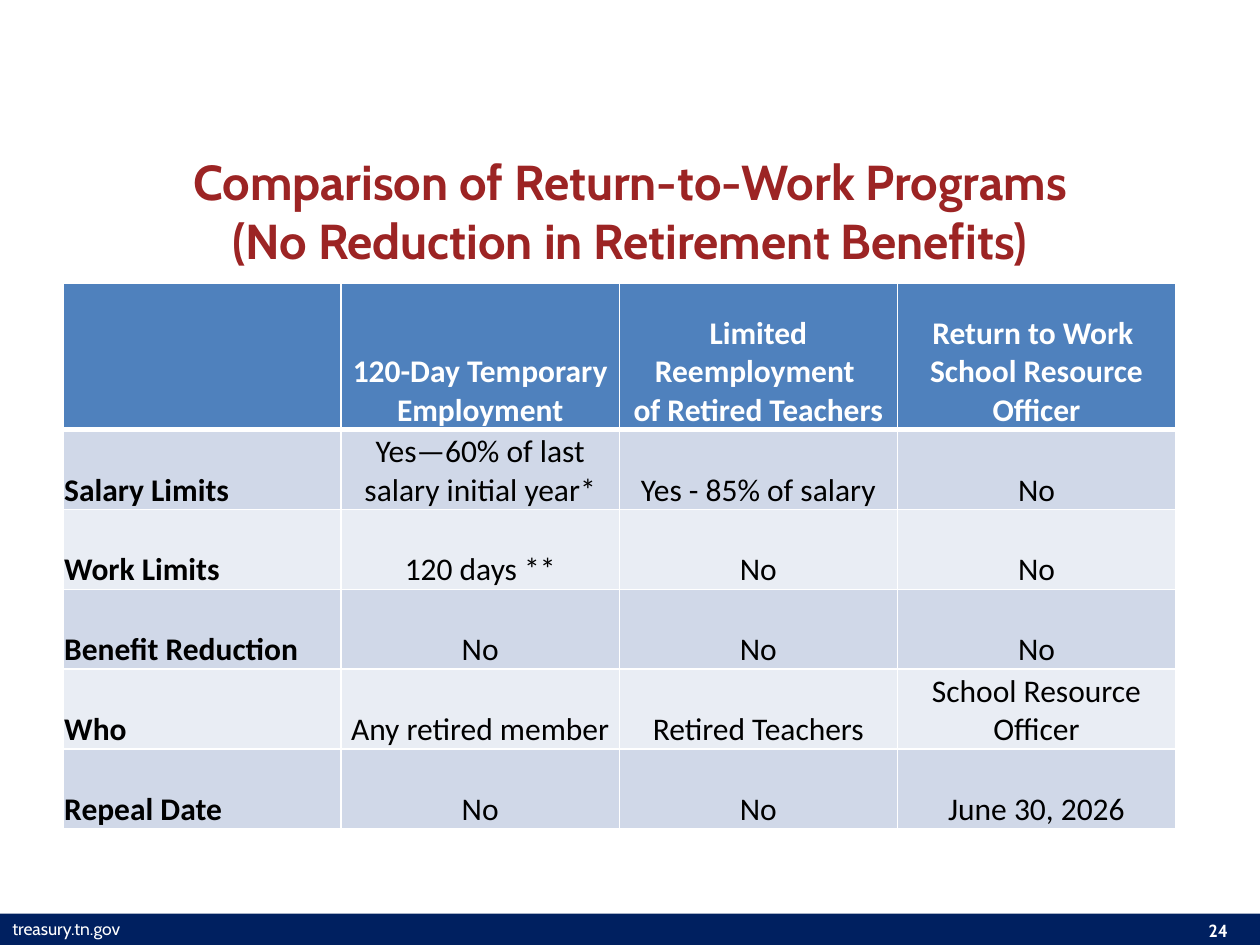
from lxml import etree
from pptx import Presentation
from pptx.dml.color import RGBColor
from pptx.enum.shapes import MSO_SHAPE
from pptx.enum.text import MSO_ANCHOR, PP_ALIGN
from pptx.oxml.ns import qn
from pptx.util import Inches, Pt

RECT = MSO_SHAPE.RECTANGLE
MIDDLE, BOTTOM = MSO_ANCHOR.MIDDLE, MSO_ANCHOR.BOTTOM
LEFT, CENTER = PP_ALIGN.LEFT, PP_ALIGN.CENTER
TITLE_ONLY = 5

WHITE, BLACK, NAVY, RED = "FFFFFF", "000000", "002060", "9C2424"
HEADER, BANDS = "4F81BD", ("D0D8E8", "E9EDF4")

TITLE = "Comparison of Return-to-Work Programs\v(No Reduction in Retirement Benefits)"
ROWS = [
    ["", "120-Day Temporary\vEmployment",
     "Limited Reemployment \vof Retired Teachers",
     "Return to Work \vSchool Resource Officer"],
    ["Salary Limits", "Yes—60% of last salary initial year*", "Yes - 85% of salary", "No"],
    ["Work Limits", "120 days **", "No", "No"],
    ["Benefit Reduction", "No", "No", "No"],
    ["Who", "Any retired member", "Retired Teachers", "School Resource Officer"],
    ["Repeal Date", "No", "No", "June 30, 2026"],
]


def rgb(value):
    return RGBColor.from_string(value)


def inches(box):
    return [Inches(v) for v in box]


def write(tf, text, size, font, color, bold=False, align=LEFT):
    tf.text = text
    for p in tf.paragraphs:
        p.alignment = align
        for r in p.runs:
            r.font.size, r.font.name, r.font.bold = Pt(size), font, bold
            r.font.color.rgb = rgb(color)


def set_borders(cell, widths):
    """Draw white borders; widths are points for left, right, top, bottom."""
    tcPr = cell._tc.get_or_add_tcPr()
    for i, (tag, width) in enumerate(zip(("lnL", "lnR", "lnT", "lnB"), widths)):
        ln = etree.Element(qn(f"a:{tag}"), w=str(Pt(width)))
        fill = etree.SubElement(ln, qn("a:solidFill"))
        etree.SubElement(fill, qn("a:srgbClr"), val=WHITE)
        tcPr.insert(i, ln)


def add_footer(slide, box, page):
    x, y, w, h = box
    # Navy strip, running slightly past both slide edges
    bar = slide.shapes.add_shape(RECT, *inches((x - 0.16, y, w + 0.25, h)))
    bar.shadow.inherit = False
    bar.fill.solid()
    bar.fill.fore_color.rgb = rgb(NAVY)
    bar.line.fill.background()
    # Web address and page number
    labels = [("treasury.tn.gov", x, y - 0.01, 1.83, False, LEFT),
              (page, x + w - 0.58, y, 0.5, True, CENTER)]
    for text, left, top, width, bold, align in labels:
        tb = slide.shapes.add_textbox(*inches((left, top, width, 0.27)))
        tb.text_frame.word_wrap = True
        write(tb.text_frame, text, 10, "Cabin", WHITE, bold, align)


def add_title(slide, box):
    title = slide.shapes.title
    title.left, title.top, title.width, title.height = inches(box)
    title.text_frame.vertical_anchor = MIDDLE
    write(title.text_frame, TITLE, 28, "Cabin", RED, True, CENTER)


def add_comparison(slide, box, header_height):
    n_rows, n_cols = len(ROWS), len(ROWS[0])
    table = slide.shapes.add_table(n_rows, n_cols, *inches(box)).table
    row_height = (box[3] - header_height) / (n_rows - 1)
    for col in table.columns:
        col.width = Inches(box[2] / n_cols)
    for i, row in enumerate(ROWS):
        table.rows[i].height = Inches(row_height if i else header_height)
        for j, text in enumerate(row):
            cell = table.cell(i, j)
            cell.vertical_anchor = BOTTOM
            cell.margin_left = cell.margin_right = cell.margin_top = Inches(0.01)
            cell.margin_bottom = 0
            cell.fill.solid()
            cell.fill.fore_color.rgb = rgb(BANDS[(i - 1) % 2] if i else HEADER)
            set_borders(cell, (1, 1, 3 if i == 1 else 1, 1 if i else 3))
            write(cell.text_frame, text, 18, "Calibri", BLACK if i else WHITE,
                  bold=i == 0 or j == 0, align=CENTER if j else LEFT)


def main():
    prs = Presentation()
    prs.slide_width, prs.slide_height = Inches(10), Inches(7.5)
    slide = prs.slides.add_slide(prs.slide_layouts[TITLE_ONLY])
    add_footer(slide, (0, 7.25, 10, 0.25), "24")
    add_title(slide, (0.5, 1.17, 9, 1))
    add_comparison(slide, (0.5, 2.25, 8.83, 4.33), header_height=1.16)
    prs.save("out.pptx")


if __name__ == "__main__":
    main()
